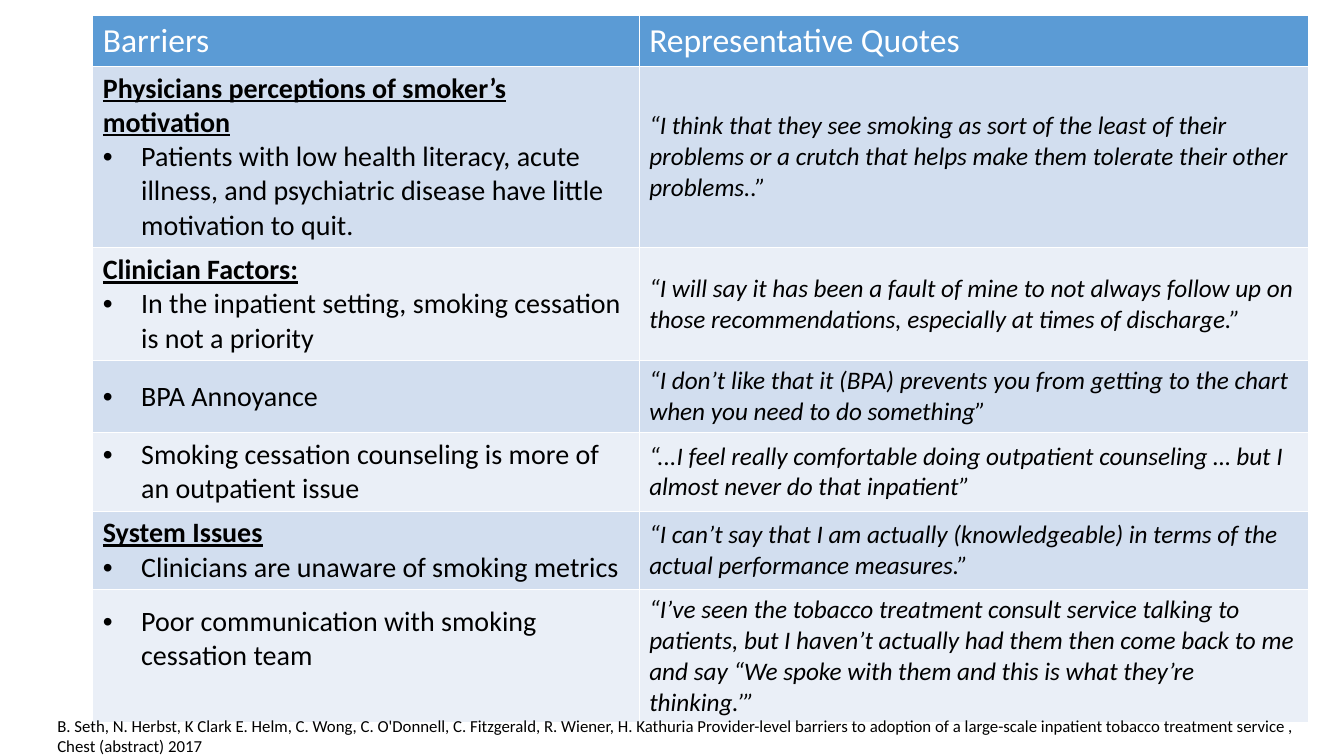
from lxml import etree
from pptx import Presentation
from pptx.dml.color import RGBColor
from pptx.enum.text import MSO_ANCHOR
from pptx.oxml.ns import qn
from pptx.util import Inches, Pt

MIDDLE = MSO_ANCHOR.MIDDLE
FONT = "Calibri"
BLACK, WHITE = "000000", "FFFFFF"
HEADER_BLUE = "5B9BD5"
BANDS = ["D2DEEF", "EAEFF7"]
BULLET_INDENT = Inches(0.38)


def rgb(value):
    return RGBColor.from_string(value)


def write(frame, text, size=18, color=BLACK, bold=False, italic=False,
          underline=False, bullet=False):
    """Fill the first empty paragraph, or add one after the existing text."""
    paragraph = frame.add_paragraph() if frame.text else frame.paragraphs[0]
    run = paragraph.add_run()
    run.text = text
    font = run.font
    font.name, font.size, font.color.rgb = FONT, Pt(size), rgb(color)
    font.bold, font.italic, font.underline = bold, italic, underline
    if bullet:
        properties = paragraph._p.get_or_add_pPr()
        properties.set("marL", str(BULLET_INDENT))
        properties.set("indent", str(-BULLET_INDENT))
        etree.SubElement(properties, qn("a:buFont"), typeface="Arial")
        etree.SubElement(properties, qn("a:buChar"), char="•")


prs = Presentation()
prs.slide_width, prs.slide_height = Inches(13.33), Inches(7.5)
slide = prs.slides.add_slide(prs.slide_layouts[6])

# Each row: group heading (if any), barrier, representative quote
headings = ["Barriers", "Representative Quotes"]
findings = [
    ("Physicians perceptions of smoker’s motivation",
     "Patients with low health literacy, acute illness, and psychiatric disease "
     "have little motivation to quit.",
     "“I think that they see smoking as sort of the least of their problems or a "
     "crutch that helps make them tolerate their other problems..”"),
    ("Clinician Factors:",
     "In the inpatient setting, smoking cessation is not a priority",
     "“I will say it has been a fault of mine to not always follow up on those "
     "recommendations, especially at times of discharge.”"),
    (None,
     "BPA Annoyance",
     "“I don’t like that it (BPA) prevents you from getting to the chart when you "
     "need to do something”"),
    (None,
     "Smoking cessation counseling is more of an outpatient issue",
     "“...I feel really comfortable doing outpatient counseling … but I almost "
     "never do that inpatient”"),
    ("System Issues",
     "Clinicians are unaware of smoking metrics",
     "“I can’t say that I am actually (knowledgeable) in terms of the actual "
     "performance measures.”"),
    (None,
     "Poor communication with smoking cessation team",
     "“I’ve seen the tobacco treatment consult service talking to patients, but I "
     "haven’t actually had them then come back to me and say “We spoke with them "
     "and this is what they’re thinking.’”"),
]

# Table: minimum row heights, rows grow with their text
table_height = Inches(6.9)
barrier_frame = slide.shapes.add_table(
    len(findings) + 1, 2, Inches(0.92), Inches(0.15), Inches(12.06), table_height)
barriers = barrier_frame.table
for column, width in zip(barriers.columns, (5.42, 6.64)):
    column.width = Inches(width)
for row in barriers.rows:
    row.height = Inches(0.41)
barrier_frame.height = table_height

# Row fills: header, then alternating bands
for index, row in enumerate(barriers.rows):
    for cell in row.cells:
        cell.vertical_anchor = MIDDLE
        cell.fill.solid()
        cell.fill.fore_color.rgb = rgb(BANDS[(index - 1) % 2] if index else HEADER_BLUE)

# Table text
for column, heading in enumerate(headings):
    write(barriers.cell(0, column).text_frame, heading, size=24, color=WHITE)
for index, (group, barrier, quote) in enumerate(findings, start=1):
    barrier_text = barriers.cell(index, 0).text_frame
    if group:
        write(barrier_text, group, size=20, bold=True, underline=True)
    write(barrier_text, barrier, size=20, bullet=True)
    write(barriers.cell(index, 1).text_frame, quote, italic=True)

# The last barrier sits above the middle of its row
barriers.cell(len(findings), 0).margin_bottom = Inches(0.39)

# Citation
citation = slide.shapes.add_textbox(
    Inches(0.47), Inches(7.05), Inches(12.49), Inches(0.5)).text_frame
citation.word_wrap = True
write(citation,
      "B. Seth, N. Herbst, K Clark E. Helm, C. Wong, C. O'Donnell, C. Fitzgerald, "
      "R. Wiener, H. Kathuria Provider-level barriers to adoption of a large-scale "
      "inpatient tobacco treatment service , Chest (abstract) 2017", size=12)

prs.save("out.pptx")
